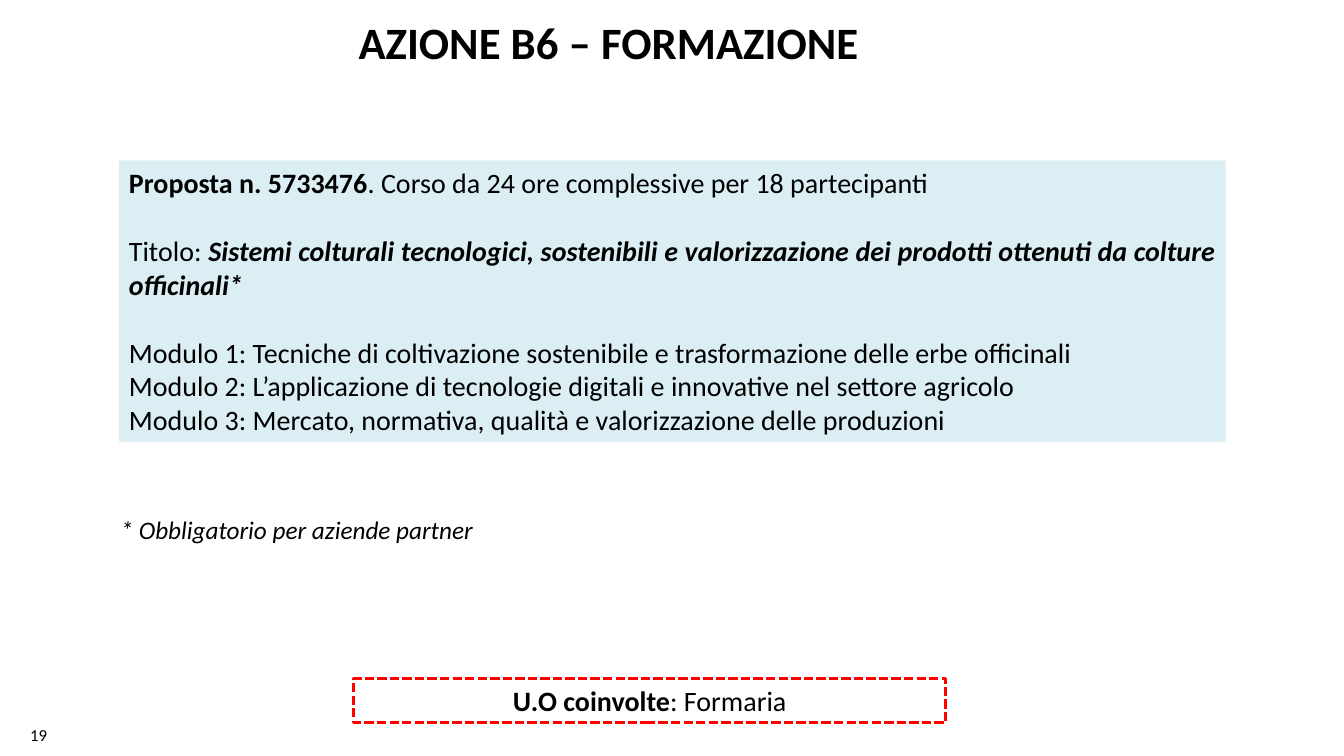
from pptx import Presentation
from pptx.dml.color import RGBColor
from pptx.enum.dml import MSO_LINE
from pptx.enum.shapes import MSO_SHAPE
from pptx.enum.text import MSO_ANCHOR, MSO_AUTO_SIZE, PP_ALIGN
from pptx.util import Cm, Pt

LEFT, CENTER, JUSTIFY = PP_ALIGN.LEFT, PP_ALIGN.CENTER, PP_ALIGN.JUSTIFY
TOP, MIDDLE = MSO_ANCHOR.TOP, MSO_ANCHOR.MIDDLE
NO_AUTOFIT = MSO_AUTO_SIZE.NONE
RECTANGLE = MSO_SHAPE.RECTANGLE
SHORT_DASH = MSO_LINE.SQUARE_DOT
TITLE_ONLY = 5


def color(hex_code):
    return RGBColor.from_string(hex_code)


class SlideBuilder:
    font = "Calibri"
    ink = "000000"
    panel_fill = "DBEEF4"
    frame_line = "FF0000"

    def __init__(self, deck):
        self.page = deck.slides.add_slide(deck.slide_layouts[TITLE_ONLY])

    def fill_text(self, box, paragraphs, size, align=LEFT, anchor=TOP):
        """Fill a box with (space before, [(text, style letters), ...]) paragraphs."""
        frame = box.text_frame
        frame.word_wrap = True
        frame.auto_size = NO_AUTOFIT
        frame.vertical_anchor = anchor
        frame.margin_left = frame.margin_right = Cm(0.25)
        frame.margin_top = frame.margin_bottom = Cm(0.13)
        for index, (space_before, spans) in enumerate(paragraphs):
            para = frame.add_paragraph() if index else frame.paragraphs[0]
            para.alignment = align
            para.space_before = Pt(space_before)
            for text, style in spans:
                span = para.add_run()
                span.text = text
                span.font.name = self.font
                span.font.size = Pt(size)
                span.font.bold = "b" in style
                span.font.italic = "i" in style
                span.font.color.rgb = color(self.ink)

    def title(self, text, left, top, width, height):
        box = self.page.shapes.title
        box.left, box.top = Cm(left), Cm(top)
        box.width, box.height = Cm(width), Cm(height)
        self.fill_text(box, [(0, [(text, "b")])], 32, CENTER)

    def label(self, text, style, size, left, top, width, height):
        box = self.page.shapes.add_textbox(Cm(left), Cm(top), Cm(width), Cm(height))
        self.fill_text(box, [(0, [(text, style)])], size)

    def rectangle(self, left, top, width, height):
        box = self.page.shapes.add_shape(
            RECTANGLE, Cm(left), Cm(top), Cm(width), Cm(height))
        box.shadow.inherit = False
        return box

    def panel(self, paragraphs, *place):
        box = self.rectangle(*place)
        box.fill.solid()
        box.fill.fore_color.rgb = color(self.panel_fill)
        box.line.fill.background()
        self.fill_text(box, paragraphs, 20, JUSTIFY, MIDDLE)

    def dashed_frame(self, spans, *place):
        box = self.rectangle(*place)
        box.fill.background()
        box.line.color.rgb = color(self.frame_line)
        box.line.width = Pt(2.25)
        box.line.dash_style = SHORT_DASH
        self.fill_text(box, [(0, spans)], 20, CENTER, MIDDLE)


def main():
    deck = Presentation()
    deck.slide_width, deck.slide_height = Cm(33.87), Cm(19.05)
    slide = SlideBuilder(deck)

    slide.title("AZIONE B6 – FORMAZIONE", 4.75, 0.23, 21.18, 1.63)
    slide.dashed_frame([("U.O coinvolte", "b"), (": Formaria", "")],
                       8.92, 17.09, 14.91, 1.12)

    block_gap = 24.4
    course = [
        (0, [("Proposta n. 5733476", "b"),
             (". Corso da 24 ore complessive per 18 partecipanti", "")]),
        (block_gap, [("Titolo: ", ""),
                     ("Sistemi colturali tecnologici, sostenibili e valorizzazione "
                      "dei prodotti ottenuti da colture officinali*", "bi")]),
    ]
    modules = [
        "Tecniche di coltivazione sostenibile e trasformazione delle erbe officinali",
        "L’applicazione di tecnologie digitali e innovative nel settore agricolo",
        "Mercato, normativa, qualità e valorizzazione delle produzioni",
    ]
    for number, module in enumerate(modules, start=1):
        space_before = block_gap if number == 1 else 0
        course.append((space_before, [(f"Modulo {number}: {module}", "")]))
    slide.panel(course, 3, 4.04, 27.89, 7.09)

    slide.label("* Obbligatorio per aziende partner", "i", 18, 2.79, 12.83, 9.53, 1.02)
    slide.label("19", "", 12, 0.51, 18.14, 2.21, 0.76)

    deck.save("out.pptx")


if __name__ == "__main__":
    main()
